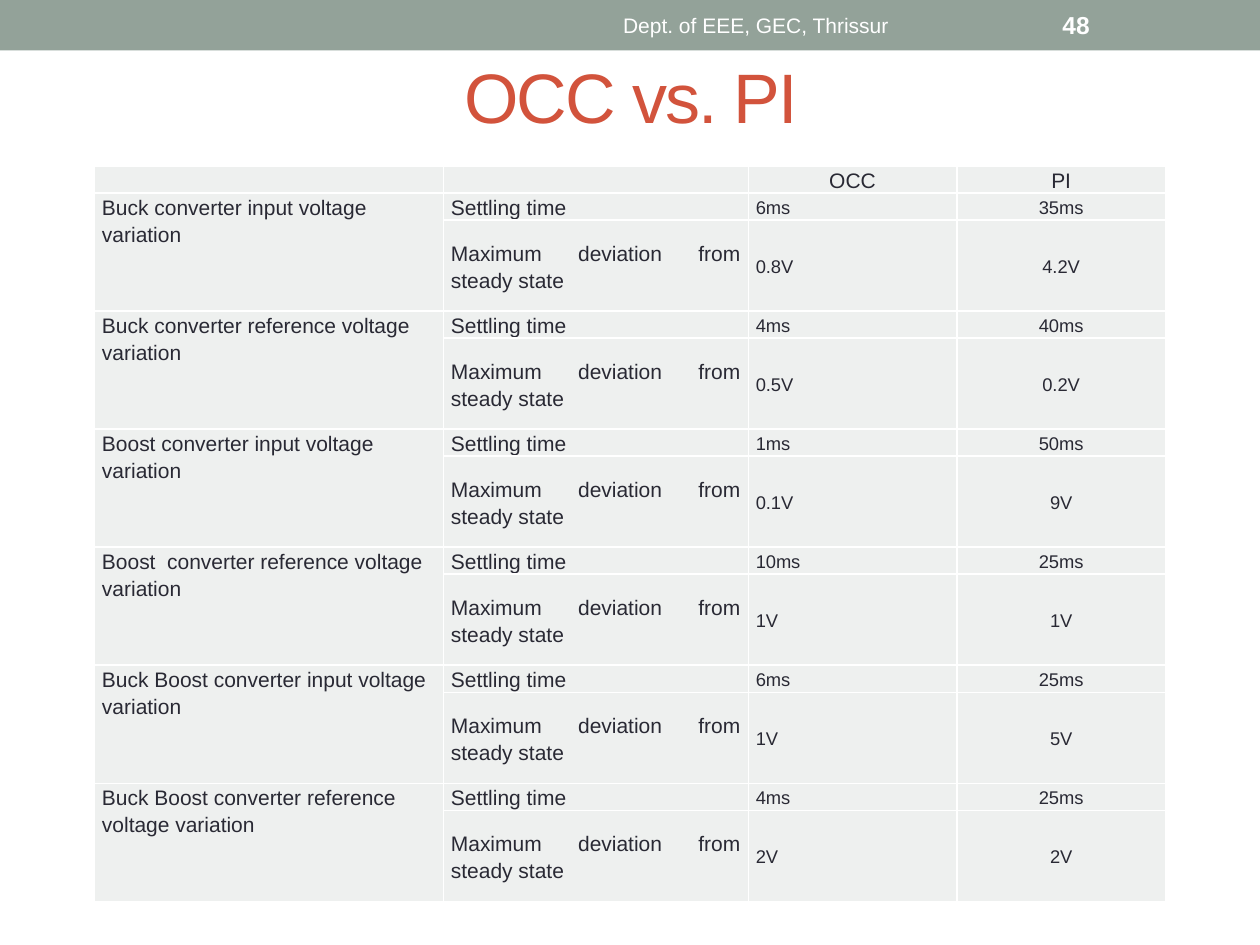
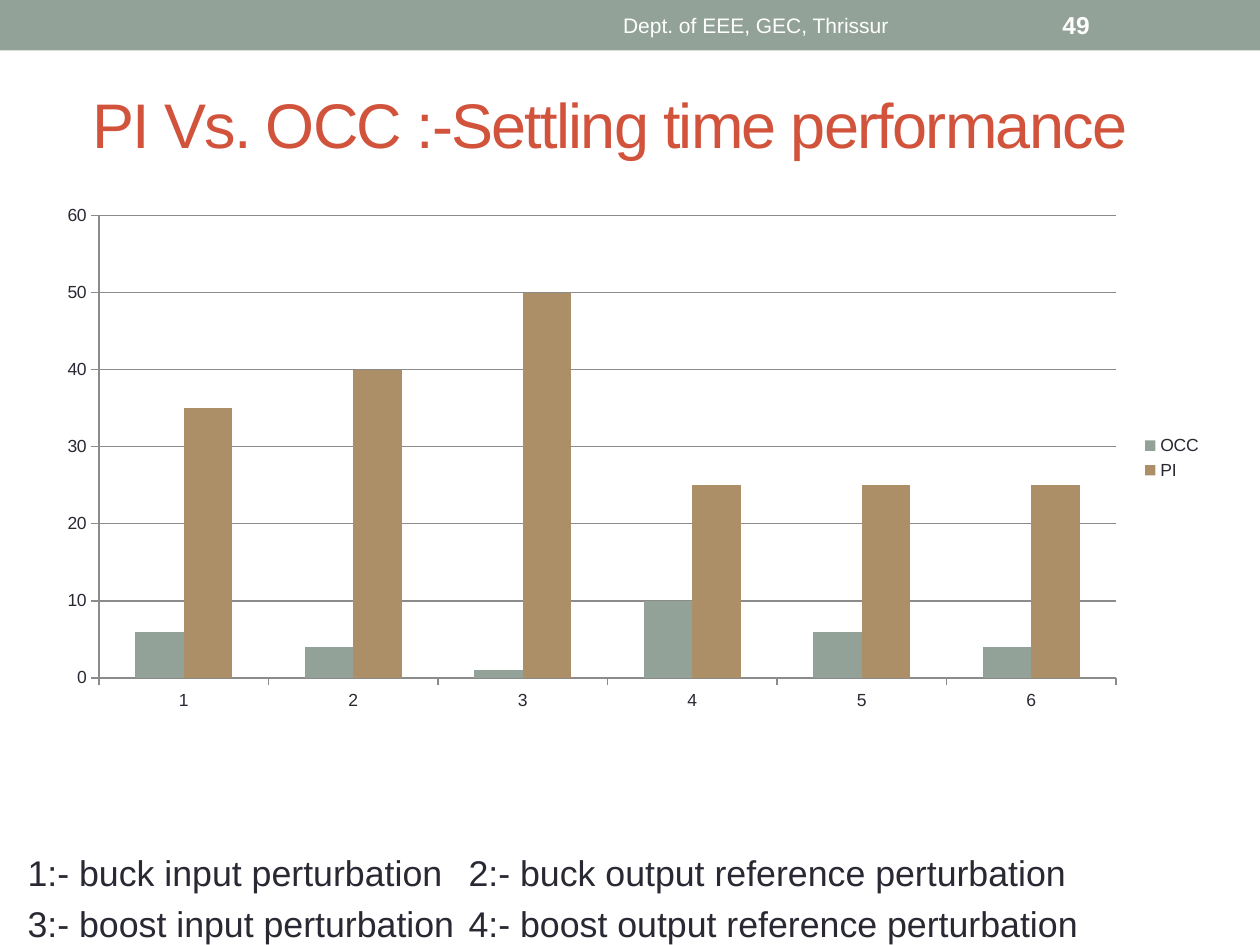
from lxml import etree
from pptx import Presentation
from pptx.chart.data import CategoryChartData
from pptx.dml.color import RGBColor
from pptx.enum.chart import XL_CHART_TYPE, XL_LEGEND_POSITION, XL_TICK_MARK
from pptx.enum.shapes import MSO_SHAPE
from pptx.enum.text import MSO_ANCHOR, MSO_AUTO_SIZE, PP_ALIGN
from pptx.oxml.ns import qn
from pptx.util import Pt

SAGE = RGBColor(0x93, 0xA2, 0x99)
TAN = RGBColor(0xAD, 0x8F, 0x67)
RUST = RGBColor(0xD2, 0x53, 0x3C)
INK = RGBColor(0x29, 0x29, 0x34)
WHITE = RGBColor(0xFF, 0xFF, 0xFF)
CELL = RGBColor(0xEE, 0xF0, 0xEF)
GRID = RGBColor(0x8B, 0x8B, 0x8B)
FONT = "Arial"
LEFT, CENTER, JUSTIFY = PP_ALIGN.LEFT, PP_ALIGN.CENTER, PP_ALIGN.JUSTIFY
TOP, MIDDLE, BOTTOM = MSO_ANCHOR.TOP, MSO_ANCHOR.MIDDLE, MSO_ANCHOR.BOTTOM
OUTSIDE = XL_TICK_MARK.OUTSIDE


def put_text(tf, text, size=12, color=INK, align=LEFT, bold=False,
             line=1.0, before=0, tracking=0):
    """Fill a text frame, one paragraph for each line of text."""
    for i, s in enumerate(text.split("\n")):
        p = tf.paragraphs[0] if i == 0 else tf.add_paragraph()
        p.alignment, p.line_spacing, p.space_before = align, line, Pt(before)
        if not s:
            etree.SubElement(p._p, qn("a:endParaRPr"), sz=str(size * 100))
            continue
        r = p.add_run()
        r.text = s
        r.font.name, r.font.size, r.font.bold = FONT, Pt(size), bold
        r.font.color.rgb = color
        if tracking:
            r._r.get_or_add_rPr().set("spc", str(int(tracking * 100)))


def place(sp, left, top, width, height, anchor=MIDDLE):
    """Position a text shape and fix its frame."""
    sp.left, sp.top, sp.width, sp.height = Pt(left), Pt(top), Pt(width), Pt(height)
    tf = sp.text_frame
    tf.word_wrap, tf.auto_size, tf.vertical_anchor = True, MSO_AUTO_SIZE.NONE, anchor
    return tf


prs = Presentation()
prs.slide_width, prs.slide_height = Pt(720), Pt(540)
TITLE_BODY, TITLE_ONLY = prs.slide_layouts[1], prs.slide_layouts[5]

# Band, title, footer and number shared by the slides
pages = [
    (TITLE_ONLY, 48, "OCC vs. PI", 40, CENTER, 9.4, 90),
    (TITLE_BODY, 49, " PI Vs. OCC :-Settling time performance", 36, LEFT, 31.7, 77.8),
]
slides = []
for layout, number, title, size, align, top, height in pages:
    s = prs.slides.add_slide(layout)
    slides.append(s)
    band = s.shapes.add_shape(MSO_SHAPE.RECTANGLE, 0, 0, prs.slide_width, Pt(28.8))
    band.shadow.inherit = False
    band.fill.solid()
    band.fill.fore_color.rgb = SAGE
    band.line.fill.background()
    put_text(place(s.shapes.title, 36.7, top, 648, height), title,
             size=size, color=RUST, align=align, tracking=-1)
    footer = s.shapes.add_textbox(0, 0, 0, 0)
    put_text(place(footer, 270, 1.4, 324, 26), "Dept. of EEE, GEC, Thrissur",
             color=WHITE, align=CENTER)
    page = s.shapes.add_textbox(0, 0, 0, 0)
    put_text(place(page, 600, 1.4, 84, 26), str(number),
             size=14, color=WHITE, bold=True)

comparison, performance = slides

# Comparison table: (case, settling OCC, PI, deviation OCC, PI)
cases = [
    ("Buck converter input voltage variation", 6, 35, 0.8, 4.2),
    ("Buck converter reference voltage variation", 4, 40, 0.5, 0.2),
    ("Boost converter input voltage variation", 1, 50, 0.1, 9),
    ("Boost  converter reference voltage variation", 10, 25, 1, 1),
    ("Buck Boost converter input voltage variation", 6, 25, 1, 5),
    ("Buck Boost converter reference voltage variation", 4, 25, 2, 2),
]
rows = [("", "", "OCC", "PI")]
for name, occ_time, pi_time, occ_dev, pi_dev in cases:
    rows.append((name, "Settling time", f"{occ_time}ms", f"{pi_time}ms"))
    rows.append(("", "Maximum deviation from steady state", f"{occ_dev}V", f"{pi_dev}V"))

table = comparison.shapes.add_table(len(rows), 4, Pt(54), Pt(94.8), Pt(612), Pt(419)).table
table.first_row = table.horz_banding = False
for column, width in zip(table.columns, (199.4, 174.2, 119.2, 119.2)):
    column.width = Pt(width)
for i, row in enumerate(rows):
    is_deviation = i > 0 and i % 2 == 0
    table.rows[i].height = Pt(52 if is_deviation else 15.4)
    for j, text in enumerate(row):
        cell = table.cell(i, j)
        cell.margin_left = cell.margin_right = Pt(4.3)
        cell.margin_top = cell.margin_bottom = 0
        cell.vertical_anchor = MIDDLE if j else TOP
        if i == 0 or j == 3:
            align = CENTER
        elif j == 2 or (j == 1 and is_deviation):
            align = JUSTIFY
        else:
            align = LEFT
        put_text(cell.text_frame, text, size=10.5 if i and j > 1 else 12,
                 align=align, line=1.15)
        tcPr = cell._tc.get_or_add_tcPr()
        for side in ("a:lnL", "a:lnR", "a:lnT", "a:lnB"):
            ln = etree.SubElement(tcPr, qn(side), w=str(Pt(1)))
            fill = etree.SubElement(ln, qn("a:solidFill"))
            etree.SubElement(fill, qn("a:srgbClr"), val=str(WHITE))
        cell.fill.solid()
        cell.fill.fore_color.rgb = CELL
for i in range(1, len(rows), 2):
    table.cell(i, 0).merge(table.cell(i + 1, 0))

# Key to the chart categories, second column on a tab stop
tf = place(performance.placeholders[1], 8.6, 470, 702.8, 70, anchor=BOTTOM)
tf.margin_bottom = 0
put_text(tf, "1:- buck input perturbation\t2:- buck output reference perturbation\n"
             "3:- boost input perturbation\t4:- boost output reference perturbation",
         size=20.4, before=5)
for p in tf.paragraphs:
    pPr = p._p.get_or_add_pPr()
    pPr.set("marL", "0")
    pPr.set("indent", "0")
    etree.SubElement(pPr, qn("a:buNone"))
    tabs = etree.SubElement(pPr, qn("a:tabLst"))
    etree.SubElement(tabs, qn("a:tab"), pos=str(Pt(254)), algn="l")

# Settling time chart
data = CategoryChartData()
data.categories = [str(n + 1) for n in range(len(cases))]
data.add_series("OCC", [case[1] for case in cases])
data.add_series("PI", [case[2] for case in cases])
chart = performance.shapes.add_chart(XL_CHART_TYPE.COLUMN_CLUSTERED, Pt(25.2), Pt(111.6),
                                     Pt(668.9), Pt(300.2), data).chart
chart.has_title = False
chart.font.name, chart.font.size = FONT, Pt(10)
chart.font.color.rgb = INK
chart.has_legend = True
chart.legend.position = XL_LEGEND_POSITION.RIGHT
chart.legend.include_in_layout = False
plot = chart.plots[0]
plot.gap_width, plot.overlap, plot.vary_by_categories = 150, 0, False
for series, color in zip(plot.series, (SAGE, TAN)):
    series.format.fill.solid()
    series.format.fill.fore_color.rgb = color
value_axis = chart.value_axis
value_axis.minimum_scale, value_axis.maximum_scale, value_axis.major_unit = 0, 60, 10
value_axis.has_major_gridlines = True
for axis in (chart.category_axis, value_axis):
    axis.major_tick_mark = OUTSIDE
for part in (chart.category_axis, value_axis, value_axis.major_gridlines):
    part.format.line.color.rgb = GRID
    part.format.line.width = Pt(0.75)

prs.save("out.pptx")
